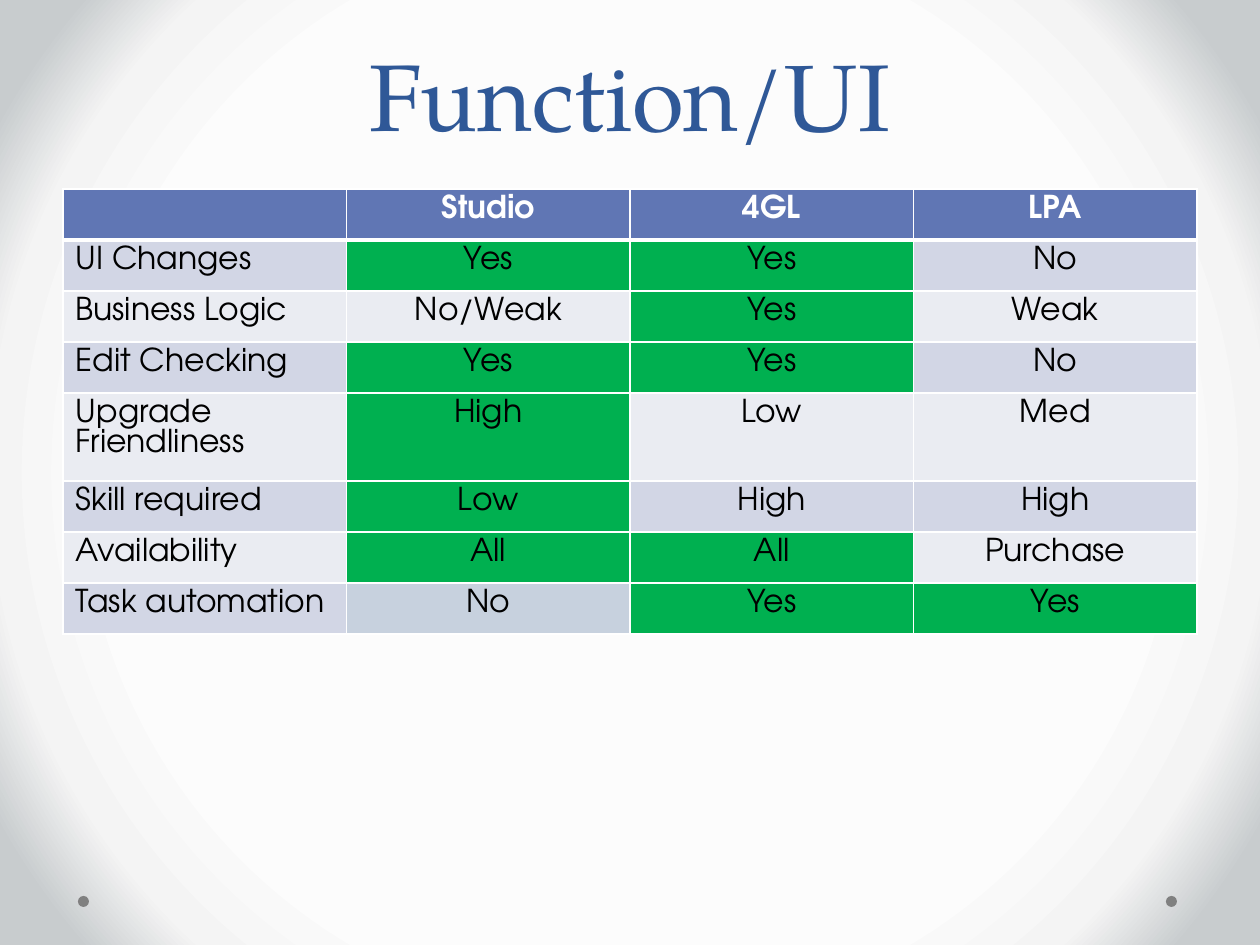
from dataclasses import dataclass

from lxml.etree import SubElement
from pptx import Presentation
from pptx.dml.color import RGBColor
from pptx.enum.shapes import MSO_SHAPE as Shape
from pptx.enum.text import MSO_ANCHOR as Anchor, PP_ALIGN as Align
from pptx.oxml.ns import qn
from pptx.util import Emu, Pt

PX_PER_INCH = 126


def px(length):
    return Emu(round(length * 914400 / PX_PER_INCH))


@dataclass(frozen=True)
class Theme:
    heading_font: str = "TeX Gyre Pagella"
    body_font: str = "TeX Gyre Adventor"
    title_size: int = 54
    title_spacing: int = 58
    body_size: int = 18
    thin: int = 1
    thick: int = 3
    title: str = "2F5897"
    text: str = "000000"
    white: str = "FFFFFF"
    header: str = "6076B4"
    bands: tuple = ("D2D6E5", "EAECF2")
    best: str = "00B050"
    muted: str = "C7D1DE"
    dot: str = "808080"
    backdrop: tuple = ((66, "FCFCFC"), (81, "F4F4F4"), (92, "C8CCCE"))


def write_text(frame, text, *, font, size, color, bold=False, align=Align.LEFT, spacing=None):
    paragraph = frame.paragraphs[0]
    paragraph.alignment = align
    if spacing:
        paragraph.line_spacing = Pt(spacing)
    run = paragraph.add_run()
    run.text = text
    run.font.name = font
    run.font.size = Pt(size)
    run.font.bold = bold
    run.font.color.rgb = RGBColor.from_string(color)


class SlideBuilder:
    def __init__(self, slide, theme):
        self.slide = slide
        self.theme = theme

    def radial_background(self):
        self.slide.background.fill.gradient()
        gradient = self.slide.element.find(".//" + qn("a:gradFill"))
        for child in list(gradient):
            gradient.remove(child)
        stops = SubElement(gradient, qn("a:gsLst"))
        for percent, color in self.theme.backdrop:
            stop = SubElement(stops, qn("a:gs"), pos=str(percent * 1000))
            SubElement(stop, qn("a:srgbClr"), val=color)
        circle = SubElement(gradient, qn("a:path"), path="circle")
        SubElement(circle, qn("a:fillToRect"), dict.fromkeys("ltrb", "50000"))

    def dot(self, left, top, size):
        shape = self.slide.shapes.add_shape(Shape.OVAL, px(left), px(top), px(size), px(size))
        shape.shadow.inherit = False
        shape.fill.solid()
        shape.fill.fore_color.rgb = RGBColor.from_string(self.theme.dot)
        shape.line.fill.background()

    def title(self, text, left, top, width, height):
        box = self.slide.shapes.add_textbox(px(left), px(top), px(width), px(height))
        frame = box.text_frame
        frame.word_wrap = True
        frame.vertical_anchor = Anchor.BOTTOM
        write_text(frame, text, font=self.theme.heading_font, size=self.theme.title_size,
                   color=self.theme.title, align=Align.CENTER, spacing=self.theme.title_spacing)

    def borders(self, cell, **widths):
        properties = cell._tc.get_or_add_tcPr()
        for index, side in enumerate("LRTB"):
            width = Pt(widths.get(side, self.theme.thin))
            line = properties.makeelement(qn(f"a:ln{side}"), {"w": str(width)})
            fill = SubElement(line, qn("a:solidFill"))
            SubElement(fill, qn("a:srgbClr"), val=self.theme.white)
            properties.insert(index, line)

    def cell(self, cell, text, fill, **text_format):
        cell.fill.solid()
        cell.fill.fore_color.rgb = RGBColor.from_string(fill)
        if text:
            write_text(cell.text_frame, text, font=self.theme.body_font,
                       size=self.theme.body_size, **text_format)

    def comparison_table(self, headings, rows, left, top, column_width, row_heights):
        theme = self.theme
        frame = self.slide.shapes.add_table(
            len(rows) + 1, len(headings), px(left), px(top),
            px(column_width * len(headings)), px(sum(row_heights)))
        table = frame.table
        for column in table.columns:
            column.width = px(column_width)
        for row, height in zip(table.rows, row_heights):
            row.height = px(height)
        for column, heading in enumerate(headings):
            cell = table.cell(0, column)
            self.cell(cell, heading, theme.header, color=theme.white, bold=True,
                      align=Align.CENTER)
            self.borders(cell, B=theme.thick)
        for row, (label, best, *values) in enumerate(rows, 1):
            band = theme.bands[(row - 1) % 2]
            for column, text in enumerate([label, *values]):
                cell = table.cell(row, column)
                fill = theme.best if column and text == best else band
                if (label, headings[column]) == ("Task automation", "Studio"):
                    fill = theme.muted
                self.cell(cell, text, fill, color=theme.text,
                          align=Align.CENTER if column else Align.LEFT)
                self.borders(cell, T=theme.thick if row == 1 else theme.thin)


HEADINGS = ("", "Studio", "4GL", "LPA")
ROWS = (
    ("UI Changes", "Yes", "Yes", "Yes", "No"),
    ("Business Logic", "Yes", "No/Weak", "Yes", "Weak"),
    ("Edit Checking", "Yes", "Yes", "Yes", "No"),
    ("Upgrade Friendliness", "High", "High", "Low", "Med"),
    ("Skill required", "Low", "Low", "High", "High"),
    ("Availability", "All", "All", "All", "Purchase"),
    ("Task automation", "Yes", "No", "Yes", "Yes"),
)


def main():
    presentation = Presentation()
    presentation.slide_width = px(1260)
    presentation.slide_height = px(945)
    slide = presentation.slides.add_slide(presentation.slide_layouts[6])
    builder = SlideBuilder(slide, Theme())
    builder.radial_background()
    for left in (1166, 78):
        builder.dot(left, 896, 11)
    builder.title("Function/UI", 63, 0, 1134, 157)
    row_heights = [51] * 4 + [72] + [51] * 3
    builder.comparison_table(HEADINGS, ROWS, 63, 189, 283.5, row_heights)
    presentation.save("out.pptx")


if __name__ == "__main__":
    main()
